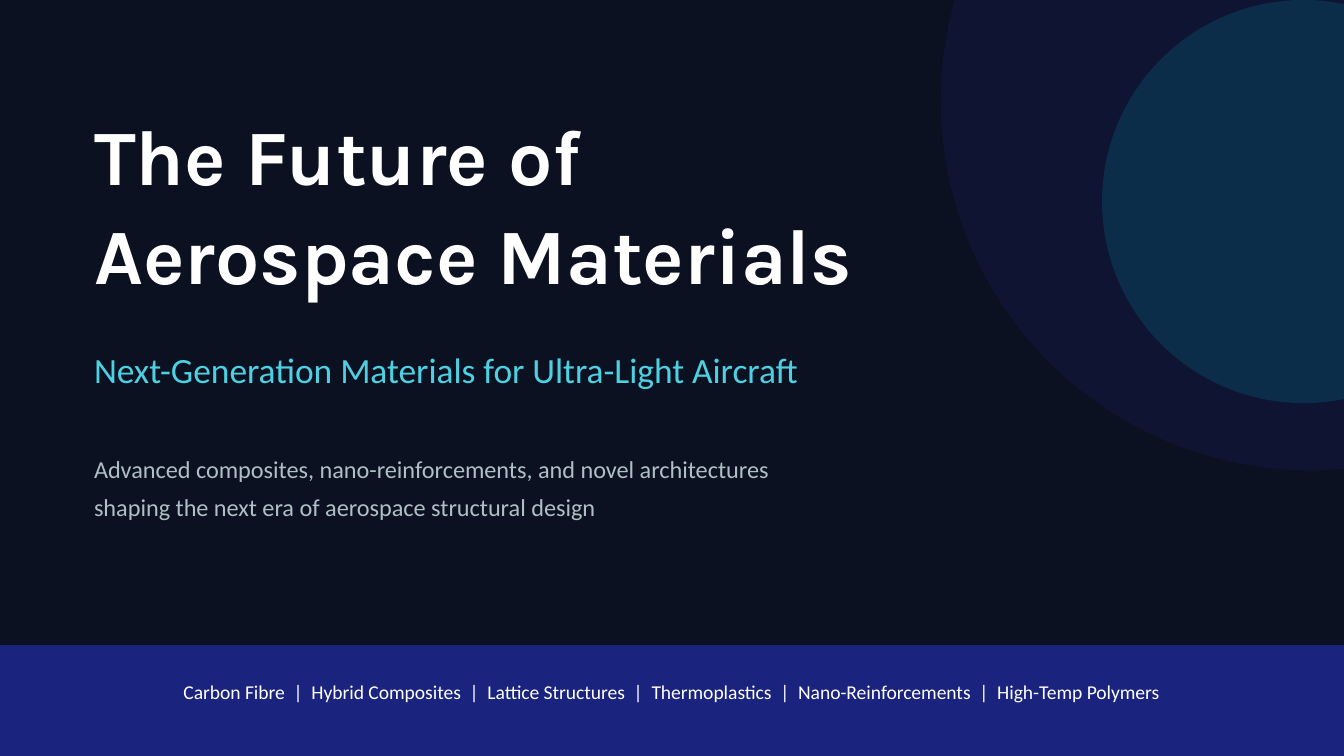
from lxml import etree
from pptx import Presentation
from pptx.dml.color import RGBColor
from pptx.enum.shapes import MSO_SHAPE
from pptx.enum.text import MSO_ANCHOR, MSO_AUTO_SIZE, PP_ALIGN
from pptx.oxml.ns import qn
from pptx.util import Inches, Pt

NIGHT = RGBColor(0x0B, 0x11, 0x20)
INDIGO = RGBColor(0x1A, 0x23, 0x7E)
CYAN = RGBColor(0x00, 0xBC, 0xD4)
LIGHT_CYAN = RGBColor(0x4D, 0xD0, 0xE1)
GREY = RGBColor(0xB0, 0xBE, 0xC5)
WHITE = RGBColor(0xFF, 0xFF, 0xFF)

# Widescreen page, 16:9
PAGE_WIDTH = 10
PAGE_HEIGHT = PAGE_WIDTH * 9 / 16
BAND_TOP = 4.8


def add_block(kind, left, top, width, height, color, opacity=100):
    block = slide.shapes.add_shape(
        kind, Inches(left), Inches(top), Inches(width), Inches(height))
    block.shadow.inherit = False
    block.line.fill.background()
    block.fill.solid()
    block.fill.fore_color.rgb = color
    if opacity < 100:
        srgb = block.fill._xPr.find(".//" + qn("a:srgbClr"))
        etree.SubElement(srgb, qn("a:alpha"), val=str(opacity * 1000))


def write(box, left, top, width, height, lines, font, size, color,
          bold=False, spacing=1.0, align=PP_ALIGN.LEFT):
    box.left, box.top = Inches(left), Inches(top)
    box.width, box.height = Inches(width), Inches(height)
    frame = box.text_frame
    frame.margin_left = frame.margin_right = 0
    frame.margin_top = frame.margin_bottom = 0
    frame.word_wrap = True
    frame.auto_size = MSO_AUTO_SIZE.NONE
    frame.vertical_anchor = MSO_ANCHOR.MIDDLE
    frame.text = "\n".join(lines)
    for paragraph in frame.paragraphs:
        paragraph.alignment = align
        paragraph.line_spacing = spacing
        paragraph.space_before = Pt(0)
        paragraph.font.name = font
        paragraph.font.size = Pt(size)
        paragraph.font.bold = bold
        paragraph.font.color.rgb = color


prs = Presentation()
prs.slide_width, prs.slide_height = Inches(PAGE_WIDTH), Inches(PAGE_HEIGHT)
slide = prs.slides.add_slide(prs.slide_layouts[0])
slide.background.fill.solid()
slide.background.fill.fore_color.rgb = NIGHT

# Overlapping circles and footer band
add_block(MSO_SHAPE.OVAL, 7, -2, 5.5, 5.5, INDIGO, 20)
add_block(MSO_SHAPE.OVAL, 8.2, 0, 3, 3, CYAN, 15)
add_block(MSO_SHAPE.RECTANGLE, 0, BAND_TOP,
          PAGE_WIDTH, PAGE_HEIGHT - BAND_TOP, INDIGO)

# Title and subtitle
write(slide.shapes.title, 0.7, 0.6, 7.5, 1.8,
      ["The Future of", "Aerospace Materials"],
      "Karla", 42, WHITE, bold=True, spacing=1.05)
write(slide.placeholders[1], 0.7, 2.5, 7, 0.5,
      ["Next-Generation Materials for Ultra-Light Aircraft"],
      "Calibri", 19, LIGHT_CYAN)

# Summary
summary = slide.shapes.add_textbox(0, 0, 0, 0)
write(summary, 0.7, 3.2, 6.5, 0.8,
      ["Advanced composites, nano-reinforcements, and novel architectures",
       "shaping the next era of aerospace structural design"],
      "Calibri", 13, GREY, spacing=1.3)

# Topics in the footer band
topics = ["Carbon Fibre", "Hybrid Composites", "Lattice Structures",
          "Thermoplastics", "Nano-Reinforcements", "High-Temp Polymers"]
footer = slide.shapes.add_textbox(0, 0, 0, 0)
write(footer, 0.5, 4.9, 9, 0.5, ["  |  ".join(topics)],
      "Calibri", 10.5, WHITE, align=PP_ALIGN.CENTER)

prs.save("out.pptx")
